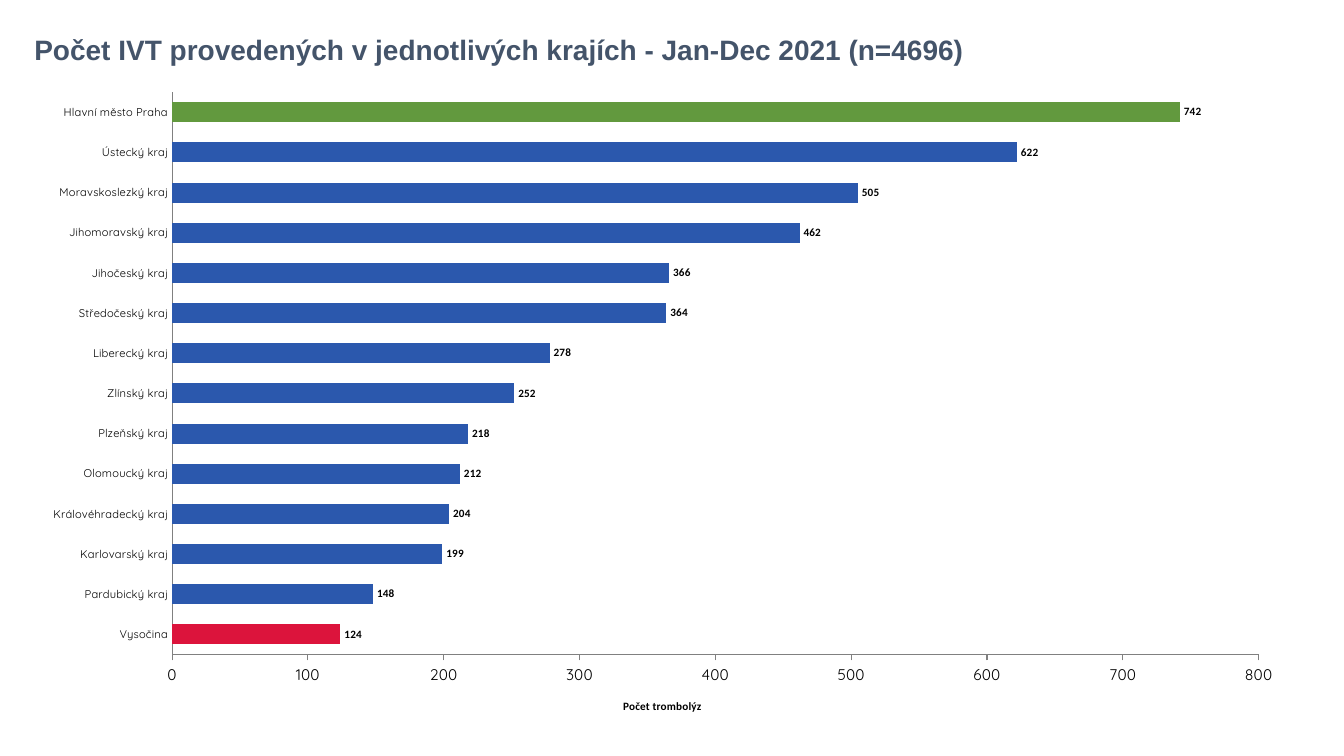
from lxml import etree
from pptx import Presentation
from pptx.chart.data import CategoryChartData
from pptx.dml.color import RGBColor
from pptx.enum import chart as chart_enum, text as text_enum
from pptx.oxml.ns import qn
from pptx.util import Pt

# Content
TITLE = "Počet IVT provedených v jednotlivých krajích - Jan-Dec 2021 (n=4696)"
AXIS_TITLE = "Počet trombolýz"
REGIONS = [
    ("Vysočina", 124),
    ("Pardubický kraj", 148),
    ("Karlovarský kraj", 199),
    ("Královéhradecký kraj", 204),
    ("Olomoucký kraj", 212),
    ("Plzeňský kraj", 218),
    ("Zlínský kraj", 252),
    ("Liberecký kraj", 278),
    ("Středočeský kraj", 364),
    ("Jihočeský kraj", 366),
    ("Jihomoravský kraj", 462),
    ("Moravskoslezký kraj", 505),
    ("Ústecký kraj", 622),
    ("Hlavní město Praha", 742),
]
COLORS = {
    "title": "44546A", "text": "000000", "axis": "808080",
    "bar": "2B58AD", "lowest": "DC143C", "highest": "62993E",
}

# Geometry in points
SLIDE_SIZE = (960, 540)
TITLE_BOX = (17.3, 10.8, 787.7, 51.8)
CHART_BOX = (20.2, 56.9, 907.2, 468)
PLOT_BOX = (122.9, 65.9, 776.2, 401.7)
AXIS_TITLE_CORNER = (443.6, 497.4)


def color(name):
    return RGBColor.from_string(COLORS[name])


def style_font(font, name, size, color_name, bold=False):
    font.name, font.size, font.bold = name, Pt(size), bold
    font.color.rgb = color(color_name)


def place_in_chart(element, index, box, inner=False):
    """Set a manual layout from slide coordinates, as fractions of the chart."""
    for old_layout in element.findall(qn("c:layout")):
        element.remove(old_layout)
    layout = etree.Element(qn("c:layout"))
    element.insert(index, layout)
    manual = etree.SubElement(layout, qn("c:manualLayout"))
    settings = [("layoutTarget", "inner")] if inner else []
    settings += [("xMode", "edge"), ("yMode", "edge")]
    left, top, width, height = CHART_BOX
    fractions = [(box[0] - left) / width, (box[1] - top) / height]
    fractions += [size / whole for size, whole in zip(box[2:], (width, height))]
    settings += [(key, f"{value:.4f}") for key, value in zip("xywh", fractions)]
    for key, value in settings:
        etree.SubElement(manual, qn(f"c:{key}")).set("val", value)


presentation = Presentation()
presentation.slide_width, presentation.slide_height = map(Pt, SLIDE_SIZE)
slide = presentation.slides.add_slide(presentation.slide_layouts[5])

# Title
title = slide.shapes.title
title.left, title.top, title.width, title.height = map(Pt, TITLE_BOX)
title.text_frame.text = TITLE
title.text_frame.vertical_anchor = text_enum.MSO_ANCHOR.MIDDLE
paragraph = title.text_frame.paragraphs[0]
paragraph.alignment = text_enum.PP_ALIGN.LEFT
paragraph.line_spacing = 0.9
style_font(paragraph.font, "Arial", 20, "title", bold=True)

# Chart
data = CategoryChartData()
data.categories = [region for region, count in REGIONS]
data.add_series("Series 1", [count for region, count in REGIONS])
chart = slide.shapes.add_chart(
    chart_enum.XL_CHART_TYPE.BAR_CLUSTERED, *map(Pt, CHART_BOX), data).chart
chart.has_legend = False
chart.has_title = False
style_font(chart.font, "Calibri", 18, "text")
place_in_chart(chart.plots[0]._element.getparent(), 0, PLOT_BOX, inner=True)

# Bars: lowest and highest regions stand out
plot = chart.plots[0]
plot.gap_width = 100
plot.vary_by_categories = False
series = plot.series[0]
series.invert_if_negative = False
series.format.fill.solid()
series.format.fill.fore_color.rgb = color("bar")
for index, name in ((0, "lowest"), (len(REGIONS) - 1, "highest")):
    fill = series.points[index].format.fill
    fill.solid()
    fill.fore_color.rgb = color(name)

# Value labels
labels = series.data_labels
labels.show_value = True
labels.position = chart_enum.XL_LABEL_POSITION.OUTSIDE_END
style_font(labels.font, "Calibri", 8, "text", bold=True)

# Axes
tick_marks = chart_enum.XL_TICK_MARK
for axis, mark, size in ((chart.category_axis, tick_marks.NONE, 8),
                         (chart.value_axis, tick_marks.OUTSIDE, 11)):
    axis.has_major_gridlines = False
    axis.major_tick_mark = mark
    axis.minor_tick_mark = tick_marks.NONE
    axis.format.line.color.rgb = color("axis")
    axis.format.line.width = Pt(0.75)
    style_font(axis.tick_labels.font, "Quicksand", size, "text")

value_axis = chart.value_axis
value_axis.minimum_scale, value_axis.maximum_scale = 0, 800
value_axis.major_unit = 100
axis_title = value_axis.axis_title
axis_title.text_frame.text = AXIS_TITLE
style_font(axis_title.text_frame.paragraphs[0].font, "Calibri", 8, "text", bold=True)
place_in_chart(axis_title._element, 1, AXIS_TITLE_CORNER)

presentation.save("out.pptx")
